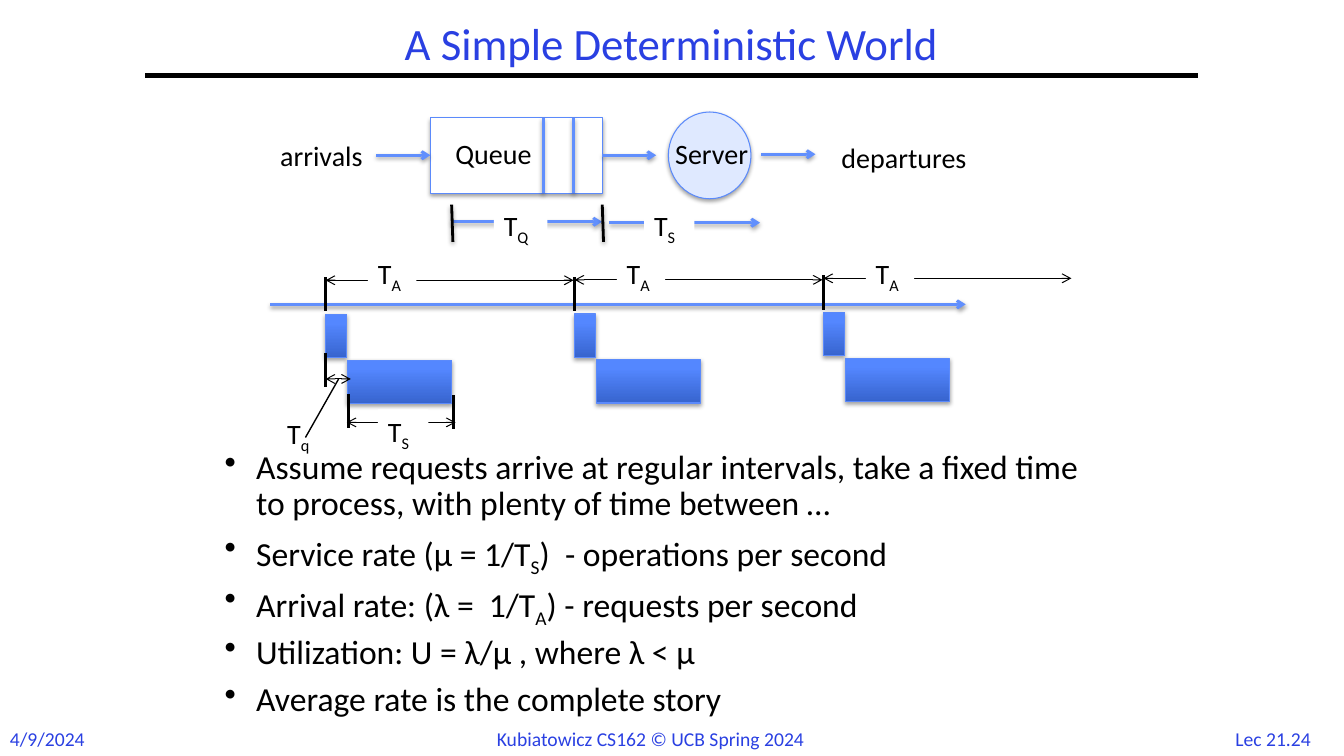
from pptx import Presentation
from pptx.dml.color import RGBColor
from pptx.enum.shapes import MSO_CONNECTOR, MSO_SHAPE
from pptx.enum.text import MSO_ANCHOR, MSO_AUTO_SIZE, PP_ALIGN
from pptx.oxml import parse_xml
from pptx.oxml.ns import nsdecls
from pptx.util import Pt

STRAIGHT = MSO_CONNECTOR.STRAIGHT
RECT, OVAL = MSO_SHAPE.RECTANGLE, MSO_SHAPE.OVAL
LEFT, CENTER = PP_ALIGN.LEFT, PP_ALIGN.CENTER
TOP, MIDDLE = MSO_ANCHOR.TOP, MSO_ANCHOR.MIDDLE
FIT, NO_FIT = MSO_AUTO_SIZE.SHAPE_TO_FIT_TEXT, MSO_AUTO_SIZE.NONE

BLACK, WHITE, BLUE = "000000", "FFFFFF", "2A40E2"
FLOW, OUTLINE = "618FFD", "5B8AFB"
BAR_DARK, BAR_LIGHT, SERVER_FILL = "3764CE", "5487FF", "DFE9FF"
SHADOW = ('<a:effectLst %s><a:outerShdw blurRad="40000" dist="20000" dir="5400000" rotWithShape="0">'
          '<a:srgbClr val="000000"><a:alpha val="36000"/></a:srgbClr></a:outerShdw></a:effectLst>'
          % nsdecls("a"))
NO_SHADOW = "<a:effectLst %s/>" % nsdecls("a")

rgb = RGBColor.from_string

prs = Presentation()
prs.slide_width, prs.slide_height = Pt(960), Pt(540)
s = prs.slides.add_slide(prs.slide_layouts[6])


def text(content, x, y, w, h, size=20, color=BLACK, align=LEFT, anchor=TOP,
         wrap=False, fill=None, spacing=None, bullet=None):
    """Add text; an underscore makes the next letter a subscript."""
    sp = s.shapes.add_textbox(Pt(x), Pt(y), Pt(w), Pt(h))
    if fill:
        sp.fill.solid()
        sp.fill.fore_color.rgb = rgb(fill)
    tf = sp.text_frame
    tf.word_wrap = wrap
    tf.auto_size = NO_FIT if wrap else FIT
    tf.vertical_anchor = anchor
    for i, paragraph in enumerate(content.split("\n")):
        p = tf.add_paragraph() if i else tf.paragraphs[0]
        p.alignment = align
        if spacing:
            p.line_spacing = spacing
        if bullet:
            p.space_before = Pt(7.2 if i else 0)
            pPr = p._p.get_or_add_pPr()
            pPr.set("marL", str(Pt(22.5)))
            pPr.set("indent", str(-Pt(22.5)))
            pPr.append(parse_xml('<a:buChar %s char="%s"/>' % (nsdecls("a"), bullet)))
        first, *rest = paragraph.split("_")
        pieces = [(first, False)]
        for part in rest:
            pieces += [(part[0], True), (part[1:], False)]
        for piece, subscript in pieces:
            if not piece:
                continue
            r = p.add_run()
            r.text = piece
            r.font.name, r.font.size = "Calibri", Pt(size)
            r.font.color.rgb = rgb(color)
            if subscript:
                r._r.get_or_add_rPr().set("baseline", "-25000")


def line(x1, y1, x2, y2, color=BLACK, width=2, ends=(), shadow=False):
    c = s.shapes.add_connector(STRAIGHT, Pt(x1), Pt(y1), Pt(x2), Pt(y2))
    c.line.color.rgb = rgb(color)
    c.line.width = Pt(width)
    for end in ends:
        c.line._get_or_add_ln().append(parse_xml('<a:%s %s type="arrow"/>' % (end, nsdecls("a"))))
    c._element.spPr.append(parse_xml(SHADOW if shadow else NO_SHADOW))


TAIL, BOTH = ("tailEnd",), ("headEnd", "tailEnd")

# Footer and title
text("Lec 21.24", 870.5, 515.5, 77.8, 24, size=14, color=BLUE, align=CENTER)
text("4/9/2024", 0, 515.5, 69, 24, size=14, color=BLUE)
text("Kubiatowicz CS162 © UCB Spring 2024", 347.8, 515.5, 265, 24, size=14, color=BLUE)
line(103.7, 54, 856, 54, width=3)
text("A Simple Deterministic World", 103.7, 12.2, 752, 41.8, size=32, color=BLUE,
     align=CENTER, anchor=MIDDLE, wrap=True, spacing=0.9)

# Bullets
text("Assume requests arrive at regular intervals, take a fixed time to process, "
     "with plenty of time between …\n"
     "Service rate (μ = 1/T_S)  - operations per second\n"
     "Arrival rate: (λ =  1/T_A) - requests per second\n"
     "Utilization: U = λ/μ , where λ < μ\n"
     "Average rate is the complete story",
     153.4, 318.2, 648, 221.8, size=24, wrap=True, spacing=0.9, bullet="•")

# Queue, server and the wait and service bars of each request
requests = [(232.6 + 177.8 * i, dy) for i, dy in enumerate((0, -0.3, -1.4))]
boxes = [(RECT, 307.4, 84.2, 123.1, 54, WHITE), (OVAL, 477.4, 80, 59, 62, SERVER_FILL)]
for x, dy in requests:
    boxes += [(RECT, x, 224.6 + dy, 15.1, 31, None), (RECT, x + 15.8, 257.2 + dy, 74.2, 31, None)]
for kind, x, y, w, h, fill in boxes:
    sp = s.shapes.add_shape(kind, Pt(x), Pt(y), Pt(w), Pt(h))
    if fill:
        sp.fill.solid()
        sp.fill.fore_color.rgb = rgb(fill)
    else:
        sp.fill.gradient()
        sp.fill.gradient_angle = 90
        for stop, position, color in zip(sp.fill.gradient_stops, (0, 0.8), (BAR_DARK, BAR_LIGHT)):
            stop.position = position
            stop.color.rgb = rgb(color)
    sp.line.color.rgb = rgb(OUTLINE)
    sp.line.width = Pt(0.75)
    sp._element.spPr.append(parse_xml(SHADOW))

# Queue slots
for x in (388, 409.7):
    line(x, 84.2, x, 138.2, FLOW, shadow=True)

# Flow arrows, the T_Q and T_S spans, and the time axis
for x1, x2, y in ((268.6, 307.4, 110.9), (430, 468.7, 110.9), (543.6, 582.5, 110.2),
                  (322.6, 430, 158.4), (434.9, 542.9, 159.1), (193, 689.8, 217.4)):
    line(x1, y, x2, y, FLOW, ends=TAIL, shadow=True)
for x in (322.6, 430.2):
    line(x, 146.2, x + 0.9, 172.8, shadow=True)

# Arrival intervals
for x, dy in requests:
    line(x, 200.2 + dy, x + 177.1, 200.2 + dy, width=0.75, ends=BOTH)
    line(x, 198 + dy, x, 222.5 + dy)
    text("T_A", x + 30.2, 180, 34.6, 31.7, fill=WHITE)

# Wait and service spans of the first request
for x, y in ((249.1, 281.7), (324, 282), (232.6, 252.2)):
    line(x, y, x, y + 24.3)
line(247.7, 301.7, 325.4, 301.7, width=0.75, ends=BOTH)
line(232.6, 270.7, 250.6, 270.7, width=0.75, ends=BOTH)
line(241.9, 270.7, 218.2, 312.5, width=1)

# Labels
for label, x, y, w, fill in (
        ("Queue", 318.2, 93.8, 74.9, None), ("Server", 475.2, 94.2, 74.2, None),
        ("arrivals", 193, 95.6, 79.9, None), ("departures", 594, 96.7, 110.9, None),
        ("T_Q", 352.8, 145.4, 38.2, WHITE), ("T_S", 460.1, 145.4, 36, WHITE),
        ("T_S", 270, 292.5, 36, WHITE), ("T_q", 198, 293.8, 34.6, None)):
    text(label, x, y, w, 31.7, fill=fill)

prs.save("out.pptx")
